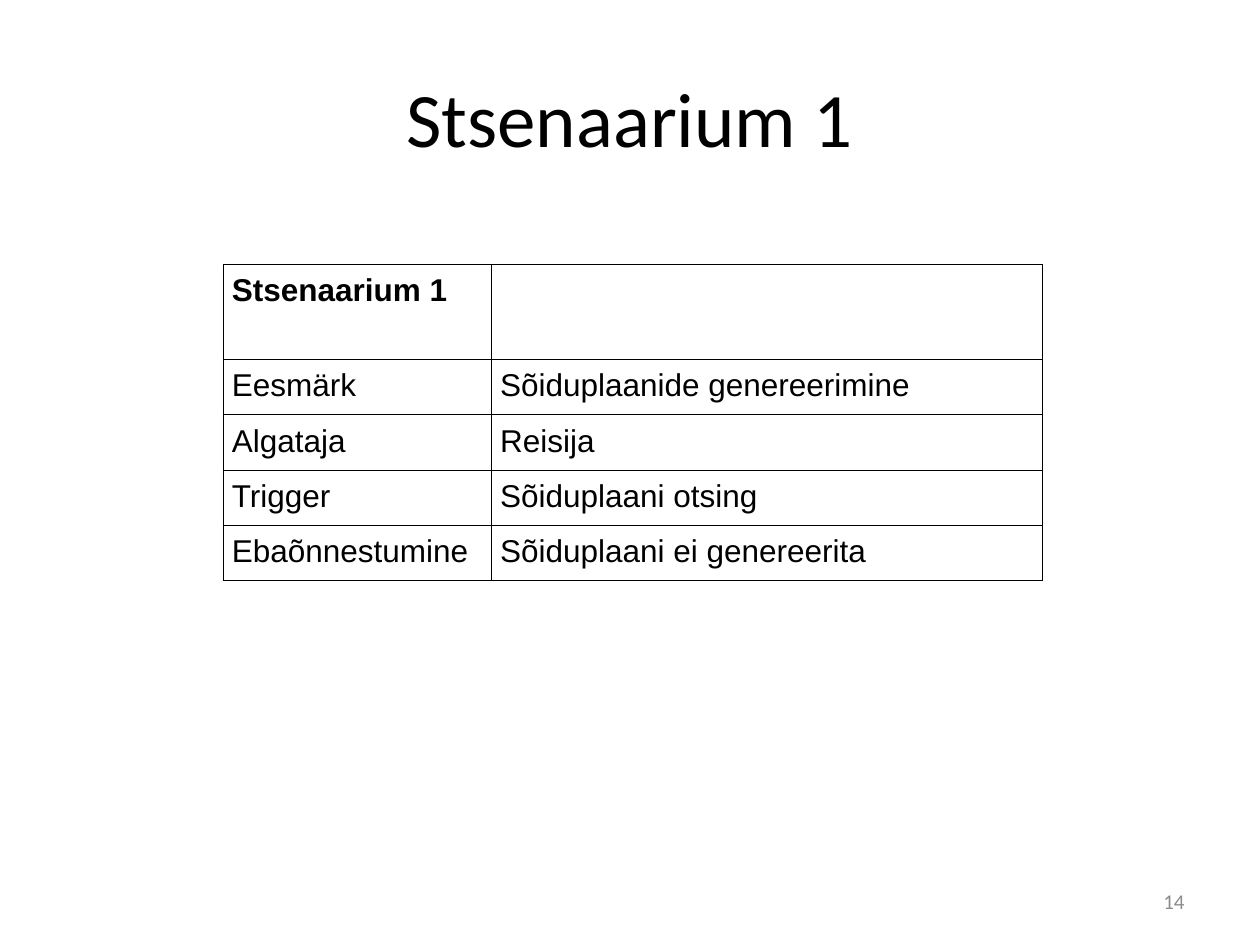
from dataclasses import dataclass

from lxml import etree
from pptx import Presentation
from pptx.dml import color
from pptx.enum import text
from pptx.oxml import ns
from pptx.slide import Slide
from pptx.util import Pt


def rgb(value):
    return color.RGBColor.from_string(value)


@dataclass
class ScenarioSlide:
    slide: Slide
    heading_font: str = "Calibri"
    table_font: str = "Arial"
    ink: str = "000000"
    muted: str = "8C8C8C"
    table_size: float = 18
    cell_margin: float = 5
    border_width: float = 0.75

    def format_runs(self, paragraph, font_name, size, font_color, bold=False):
        for run in paragraph.runs:
            run.font.name = font_name
            run.font.size = Pt(size)
            run.font.bold = bold
            run.font.color.rgb = rgb(font_color)

    def add_text(self, content, left, top, width, height, size, font_color, alignment):
        shape = self.slide.shapes.add_textbox(Pt(left), Pt(top), Pt(width), Pt(height))
        frame = shape.text_frame
        frame.word_wrap = True
        frame.vertical_anchor = text.MSO_ANCHOR.MIDDLE
        frame.text = content
        paragraph = frame.paragraphs[0]
        paragraph.alignment = alignment
        self.format_runs(paragraph, self.heading_font, size, font_color)

    def add_borders(self, cell):
        properties = cell._tc.get_or_add_tcPr()
        for position, side in enumerate(("lnL", "lnR", "lnT", "lnB")):
            line = etree.Element(ns.qn(f"a:{side}"), w=str(Pt(self.border_width)))
            fill = etree.SubElement(line, ns.qn("a:solidFill"))
            etree.SubElement(fill, ns.qn("a:srgbClr"), val=self.ink)
            properties.insert(position, line)

    def format_cell(self, cell, content, bold):
        cell.margin_left = cell.margin_right = Pt(self.cell_margin)
        cell.margin_top = cell.margin_bottom = Pt(self.cell_margin)
        cell.fill.background()
        self.add_borders(cell)
        cell.text_frame.text = content
        paragraph = cell.text_frame.paragraphs[0]
        self.format_runs(paragraph, self.table_font, self.table_size, self.ink, bold)

    def add_table(self, rows, left, top, column_widths, row_heights):
        shape = self.slide.shapes.add_table(
            len(rows), len(column_widths), Pt(left), Pt(top),
            Pt(sum(column_widths)), Pt(sum(row_heights)),
        )
        table = shape.table
        table.first_row = False
        table.horz_banding = False
        for column, width in zip(table.columns, column_widths):
            column.width = Pt(width)
        for index, (row, height) in enumerate(zip(table.rows, row_heights)):
            row.height = Pt(height)
            for cell, content in zip(row.cells, rows[index]):
                self.format_cell(cell, content, bold=index == 0)


def main():
    presentation = Presentation()
    presentation.slide_width = Pt(720)
    presentation.slide_height = Pt(540)
    slide = presentation.slides.add_slide(presentation.slide_layouts[6])
    scenario = ScenarioSlide(slide)

    scenario.add_text("Stsenaarium 1", 36, 21.6, 648, 90, 44, scenario.ink,
                      text.PP_ALIGN.CENTER)
    rows = [
        ("Stsenaarium 1", ""),
        ("Eesmärk", "Sõiduplaanide genereerimine"),
        ("Algataja", "Reisija"),
        ("Trigger", "Sõiduplaani otsing"),
        ("Ebaõnnestumine", "Sõiduplaani ei genereerita"),
    ]
    row_heights = [54.3] + [30.7] * (len(rows) - 1)
    scenario.add_table(rows, 127.5, 151.2, (153.3, 314.7), row_heights)
    scenario.add_text("14", 516, 500.5, 168, 28.8, 12, scenario.muted,
                      text.PP_ALIGN.RIGHT)
    presentation.save("out.pptx")


if __name__ == "__main__":
    main()
